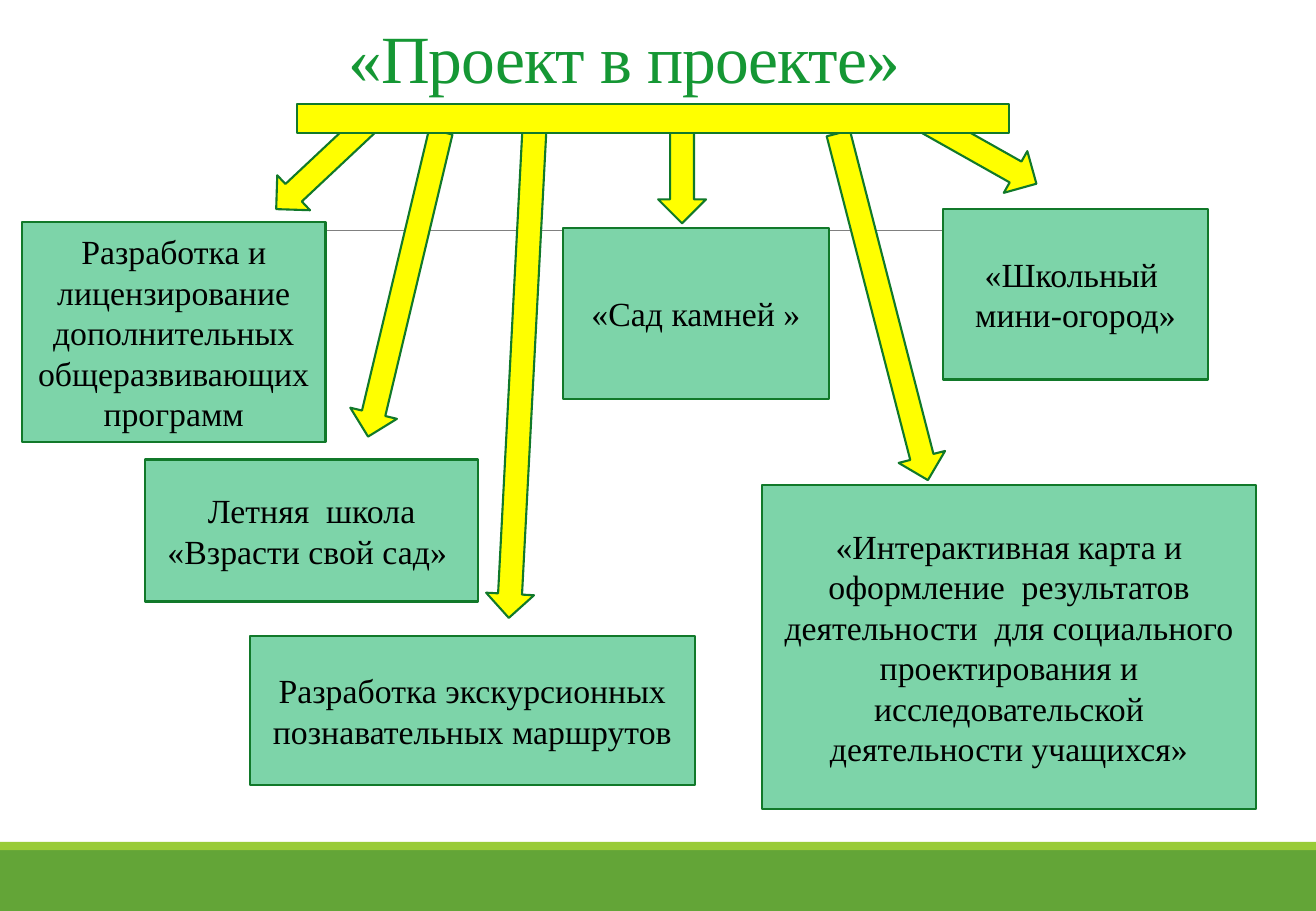
import math
from dataclasses import dataclass

from lxml import etree
from pptx import Presentation
from pptx.dml.color import RGBColor
from pptx.enum import shapes, text
from pptx.oxml import ns
from pptx.util import Pt


@dataclass(frozen=True)
class Theme:
    """Colours, font and sizes of the slide."""
    font: str = "Times New Roman"
    title: str = "159734"
    ink: str = "000000"
    box: str = "7DD4A9"
    arrow: str = "FFFF00"
    outline: str = "11792A"
    footer: str = "63A537"
    stripe: str = "99CB38"
    rule: str = "808080"
    title_size: float = 40
    box_size: float = 20
    outline_width: float = 1.25
    rule_width: float = 0.5
    arrow_width: float = 28.4


THEME = Theme()
WIDTH, HEIGHT = 780, 540
TITLE = "«Проект в проекте»"
PROJECTS = [
    ("Разработка и лицензирование дополнительных общеразвивающих программ",
     (13, 131.8, 180, 130.2)),
    ("Летняя  школа «Взрасти свой сад» ", (86.2, 272.4, 197, 84.2)),
    ("«Школьный  мини-огород»", (558.8, 123.8, 157.4, 101.2)),
    ("«Сад камней »", (333.8, 135.2, 157.4, 101.2)),
    ("Разработка экскурсионных познавательных маршрутов",
     (148.2, 376.8, 263.6, 88.4)),
    ("«Интерактивная карта и оформление  результатов деятельности  для "
     "социального проектирования и исследовательской деятельности учащихся»",
     (451.8, 287.4, 292.6, 192)),
]
ARROWS = [
    ((223, 68.3), (163.7, 124)),
    ((261.3, 78.1), (218.2, 258.8)),
    ((543.5, 69), (614.3, 108.9)),
    ((404.3, 73.4), (404.3, 132.4)),
    ((496.9, 79), (550, 284.6)),
    ((316.9, 74.4), (301.6, 366.3)),
]


def add_block(s, box, fill, outline=None, kind=shapes.MSO_SHAPE.RECTANGLE):
    """Add a flat preset shape in the given box and return it."""
    sp = s.shapes.add_shape(kind, *map(Pt, box))
    sp.shadow.inherit = False
    sp.fill.solid()
    sp.fill.fore_color.rgb = RGBColor.from_string(fill)
    if outline:
        sp.line.color.rgb = RGBColor.from_string(outline)
        sp.line.width = Pt(THEME.outline_width)
    else:
        sp.line.fill.background()
    return sp


def set_text(sp, content, size, color, anchor):
    """Write one centred paragraph and return it."""
    tf = sp.text_frame
    tf.word_wrap = True
    tf.vertical_anchor = anchor
    p = tf.paragraphs[0]
    p.text = content
    p.alignment = text.PP_ALIGN.CENTER
    font = p.runs[0].font
    font.name = THEME.font
    font.size = Pt(size)
    font.color.rgb = RGBColor.from_string(color)
    return p


def add_backdrop(s, box):
    """Draw the footer bands and the thin rule within the slide box."""
    x, y, w, h = box
    bottom = y + h
    add_block(s, (x, bottom - 36, w, 36), THEME.footer)
    add_block(s, (x, bottom - 41, w, 5), THEME.stripe)
    rule = s.shapes.add_connector(
        shapes.MSO_CONNECTOR.STRAIGHT,
        Pt(x + 76.3), Pt(y + 136.8), Pt(x + w - 65.7), Pt(y + 136.8))
    rule.line.color.rgb = RGBColor.from_string(THEME.rule)
    rule.line.width = Pt(THEME.rule_width)
    etree.SubElement(rule._element.spPr, ns.qn("a:effectLst"))


def add_title(s, box):
    """Place the slide heading in its box."""
    sp = s.shapes.add_textbox(*map(Pt, box))
    p = set_text(sp, TITLE, THEME.title_size, THEME.title,
                 text.MSO_ANCHOR.BOTTOM)
    p.line_spacing = 0.85
    p.runs[0]._r.get_or_add_rPr().set("spc", "-50")


def add_project(s, box, content):
    """Place one project card in its box."""
    sp = add_block(s, box, THEME.box, THEME.outline)
    set_text(sp, content, THEME.box_size, THEME.ink, text.MSO_ANCHOR.MIDDLE)


def add_arrow(s, tail, tip):
    """Draw a block arrow from tail to tip."""
    dx, dy = tip[0] - tail[0], tip[1] - tail[1]
    length = math.hypot(dx, dy)
    left = (tail[0] + tip[0] - THEME.arrow_width) / 2
    top = (tail[1] + tip[1] - length) / 2
    sp = add_block(s, (left, top, THEME.arrow_width, length), THEME.arrow,
                   THEME.outline, shapes.MSO_SHAPE.DOWN_ARROW)
    sp.rotation = math.degrees(math.atan2(-dx, dy))


def add_project_map(s, box):
    """Build the whole slide in the given box."""
    x, y = box[:2]
    add_backdrop(s, box)
    add_title(s, (x + 46, y - 1.4, 648, 62.6))
    for content, (left, top, w, h) in PROJECTS:
        add_project(s, (x + left, y + top, w, h), content)
    for tail, tip in ARROWS:
        add_arrow(s, (x + tail[0], y + tail[1]), (x + tip[0], y + tip[1]))
    add_block(s, (x + 176.2, y + 61.8, 422, 16.8), THEME.arrow, THEME.outline)


def main():
    """Create and save the presentation."""
    prs = Presentation()
    prs.slide_width, prs.slide_height = Pt(WIDTH), Pt(HEIGHT)
    s = prs.slides.add_slide(prs.slide_layouts[6])
    add_project_map(s, (0, 0, WIDTH, HEIGHT))
    prs.save("out.pptx")


if __name__ == "__main__":
    main()
